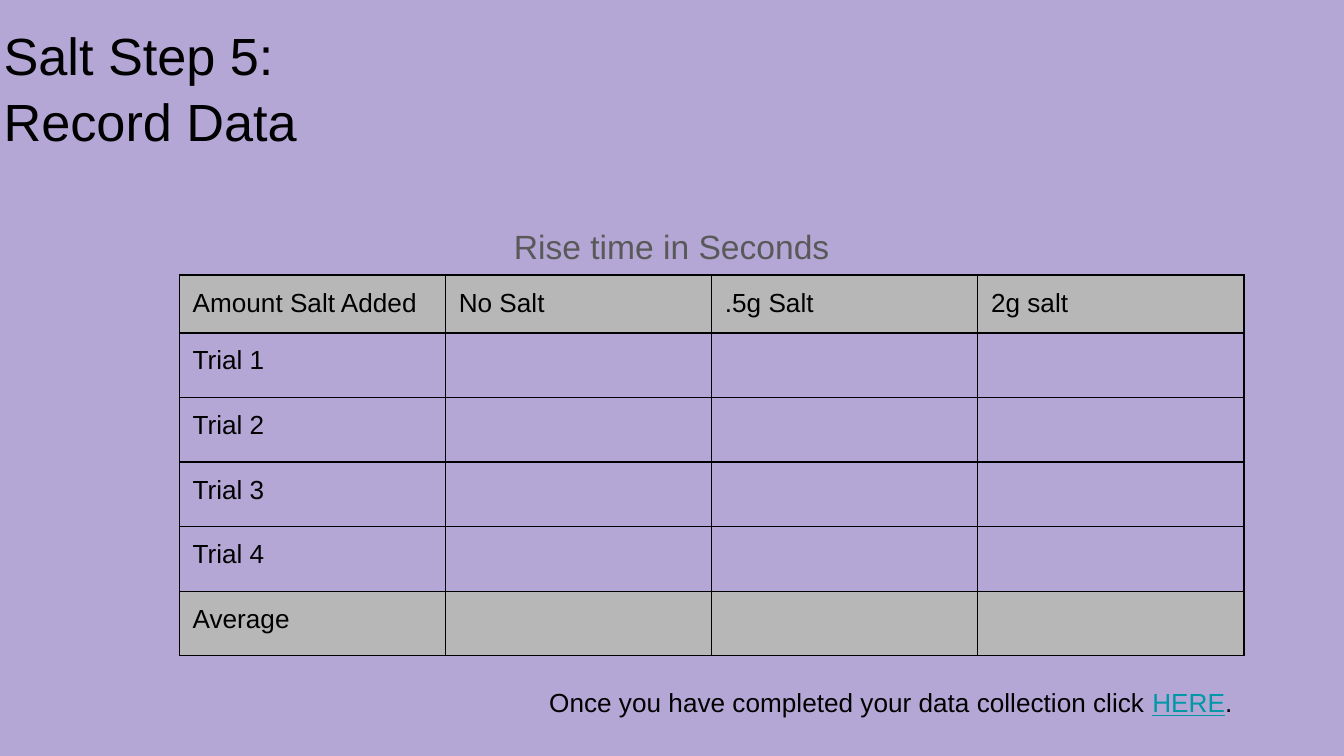
"""Build the salt experiment slide with its data recording table."""
from lxml import etree
from pptx import Presentation
from pptx import util as u
from pptx.dml.color import RGBColor
from pptx.enum import text
from pptx.oxml.ns import qn

Cm = u.Cm
INSET = Cm(0.25)


def style(p, size, color):
    for r in p.runs:
        r.font.name = "Arial"
        r.font.size = u.Pt(size)
        r.font.color.rgb = RGBColor.from_string(color)


def add_text(x, y, w, h, lines, size, color):
    tf = sld.shapes.add_textbox(Cm(x), Cm(y), Cm(w), Cm(h)).text_frame
    tf.word_wrap = True
    tf.margin_left = tf.margin_right = tf.margin_top = tf.margin_bottom = INSET
    tf.text = lines
    for p in tf.paragraphs:
        style(p, size, color)
    return tf


prs = Presentation()
prs.slide_width, prs.slide_height = Cm(25.4), Cm(14.29)
sld = prs.slides.add_slide(prs.slide_layouts[6])
sld.background.fill.solid()
sld.background.fill.fore_color.rgb = RGBColor.from_string("B4A7D6")

tf = add_text(-0.18, 0.13, 24.71, 2.7, "Salt Step 5:\nRecord Data", 28, "000000")
for p in tf.paragraphs:
    p.line_spacing = 1.05

tf = add_text(0.86, 4.03, 23.67, 1.23, "Rise time in Seconds", 18, "595959")
tf.vertical_anchor = text.MSO_ANCHOR.MIDDLE
tf.paragraphs[0].alignment = text.PP_ALIGN.CENTER

rows = [["Amount Salt Added", "No Salt", ".5g Salt", "2g salt"]]
rows += [[f"Trial {n}", "", "", ""] for n in range(1, 5)]
rows += [["Average", "", "", ""]]
heights = [1.06] + [1.22] * 5
tbl = sld.shapes.add_table(6, 4, Cm(3.39), Cm(5.2), Cm(20.12), Cm(sum(heights))).table
tbl.first_row = tbl.horz_banding = False
for col in tbl.columns:
    col.width = Cm(5.03)
for i, row in enumerate(rows):
    tbl.rows[i].height = Cm(heights[i])
    for j, label in enumerate(row):
        cell = tbl.cell(i, j)
        cell.text = label
        cell.margin_left = cell.margin_right = INSET
        cell.margin_top = cell.margin_bottom = INSET
        p = cell.text_frame.paragraphs[0]
        p.font.size = u.Pt(14)
        style(p, 14, "000000")
        for side in ("a:lnL", "a:lnR", "a:lnT", "a:lnB"):
            ln = etree.SubElement(cell._tc.get_or_add_tcPr(), qn(side), w=str(u.Pt(0.75)))
            fill = etree.SubElement(ln, qn("a:solidFill"))
            etree.SubElement(fill, qn("a:srgbClr"), val="000000")
        if i in (0, len(rows) - 1):
            cell.fill.solid()
            cell.fill.fore_color.rgb = RGBColor.from_string("B7B7B7")
        else:
            cell.fill.background()

tf = add_text(10.13, 12.73, 13.51, 1.12, "", 14, "000000")
p = tf.paragraphs[0]
for part in ("Once you have completed your data collection click ", "HERE", "."):
    p.add_run().text = part
style(p, 14, "000000")
here = p.runs[1].font
here.color.rgb = RGBColor.from_string("0097A7")
here.underline = True

prs.save("out.pptx")
